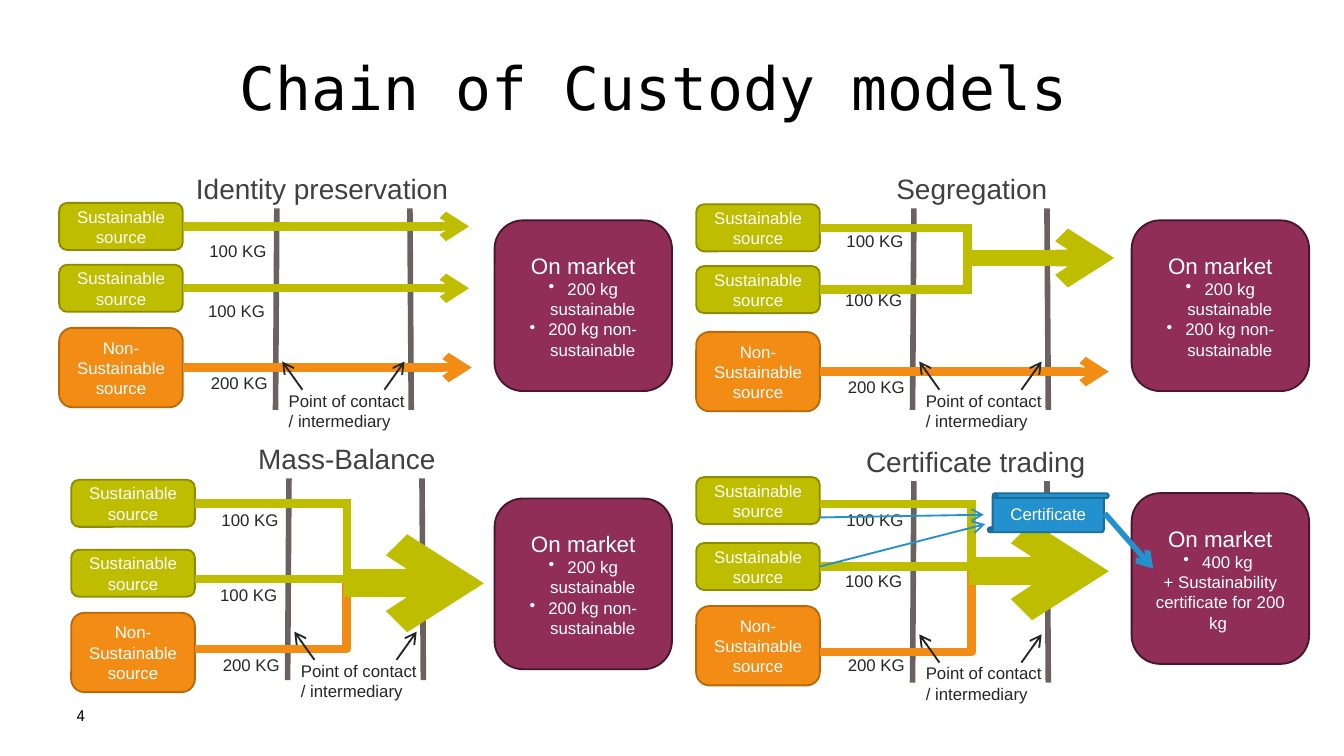
from pptx import Presentation
from pptx.dml.color import RGBColor
from pptx.enum.shapes import MSO_CONNECTOR, MSO_SHAPE
from pptx.enum.text import MSO_ANCHOR, PP_ALIGN
from pptx.oxml.ns import qn
from pptx.util import Inches, Pt
from lxml.etree import SubElement

GREEN, DARK_GREEN = RGBColor(0xBE, 0xBD, 0x00), RGBColor(0x8D, 0x8C, 0x00)
ORANGE, DARK_ORANGE = RGBColor(0xF2, 0x8C, 0x14), RGBColor(0xBA, 0x69, 0x0A)
PLUM, DARK_PLUM = RGBColor(0x90, 0x2E, 0x57), RGBColor(0x48, 0x17, 0x2C)
BLUE, DARK_BLUE = RGBColor(0x23, 0x91, 0xCE), RGBColor(0x1A, 0x6D, 0x9A)
GRAY, HEADING = RGBColor(0x6B, 0x62, 0x5F), RGBColor(0x40, 0x40, 0x40)
INK = RGBColor(0x26, 0x26, 0x26)
BLACK, WHITE = RGBColor(0, 0, 0), RGBColor(0xFF, 0xFF, 0xFF)

deck = Presentation()
deck.slide_width, deck.slide_height = Inches(10), Inches(5.625)
page = deck.slides.add_slide(deck.slide_layouts[6])

# Grid of 100 columns by 56.25 rows
COLUMN = deck.slide_width / 100
ROW = deck.slide_height / 56.25


def add_box(text, left, top, width, height, shape=None, fill=None, outline=None,
            size=9, lead=None, color=INK, font="Arial", align=PP_ALIGN.LEFT,
            inset=None, spacing=None):
    """Place text, in a preset shape if given; lines that start with • are bullets."""
    area = [int(left * COLUMN), int(top * ROW), int(width * COLUMN), int(height * ROW)]
    if shape is None:
        box = page.shapes.add_textbox(*area)
    else:
        box = page.shapes.add_shape(shape, *area)
        box.shadow.inherit = False
        box.fill.solid()
        box.fill.fore_color.rgb = fill
        box.line.color.rgb = outline
        box.line.width = Pt(1)
        color, align = WHITE, PP_ALIGN.CENTER
    frame = box.text_frame
    frame.word_wrap = True
    frame.vertical_anchor = MSO_ANCHOR.MIDDLE if shape else MSO_ANCHOR.TOP
    if inset is not None:
        frame.margin_left = frame.margin_right = inset
        frame.margin_top = frame.margin_bottom = inset
    for index, words in enumerate(text.split("\n")):
        para = frame.add_paragraph() if index else frame.paragraphs[0]
        para.alignment = align
        if spacing:
            para.line_spacing = spacing
        if words.startswith("•"):
            layout = para._p.get_or_add_pPr()
            layout.set("marL", str(Inches(0.14)))
            layout.set("indent", str(-Inches(0.14)))
            SubElement(layout, qn("a:buChar")).set("char", "•")
        span = para.add_run()
        span.text = words.removeprefix("•")
        span.font.name = font
        span.font.size = Pt(lead if lead and index == 0 else size)
        span.font.color.rgb = color
    return box


def add_line(x1, y1, x2, y2, color, width, arrow=False, elbow=False, start=None):
    """Draw a connector, optionally joined to the right side of a start box."""
    kind = MSO_CONNECTOR.ELBOW if elbow else MSO_CONNECTOR.STRAIGHT
    line = page.shapes.add_connector(kind, int(x1 * COLUMN), int(y1 * ROW),
                                     int(x2 * COLUMN), int(y2 * ROW))
    line.line.color.rgb = color
    line.line.width = Pt(width)
    if start is not None:
        line.begin_connect(start, 3)
    properties = line._element.spPr
    if arrow:
        SubElement(properties.find(qn("a:ln")), qn("a:tailEnd")).set("type", "arrow")
    if elbow:
        guide = SubElement(properties.find(qn("a:prstGeom")).find(qn("a:avLst")), qn("a:gd"))
        guide.set("name", "adj1")
        guide.set("fmla", "val 100000")
    SubElement(properties, qn("a:effectLst"))


# Slide title and number
add_box("Chain of Custody models ", 11.1, 4.4, 77.8, 8.8, size=32, color=BLACK,
        font="DejaVu Sans Mono", align=PP_ALIGN.CENTER, inset=0, spacing=0.9)
add_box("4", 4.7, 52.1, 4.6, 3, size=8, color=BLACK, font="Noto Sans Mono")

SOURCES = [
    ("Sustainable source", 3.5, GREEN, DARK_GREEN, "100 KG", 10.2),
    ("Sustainable source", 3.5, GREEN, DARK_GREEN, "100 KG", 10.1),
    ("Non-Sustainable source", 5.9, ORANGE, DARK_ORANGE, "200 KG", 10.3),
]
SPLIT_MARKET = "On market\n•200 kg sustainable\n•200 kg non-sustainable"
CERTIFIED_MARKET = "On market\n•400 kg \n+ Sustainability certificate for 200 kg "

# A flow row of None starts at the middle of its source.
# join is the column where flows merge; trunk is (row, end column, width).
PANELS = [
    dict(title="Identity preservation", align=PP_ALIGN.LEFT, left=4.4, top=15.5,
         market=(SPLIT_MARKET, 36.8, 16.4), sources=(15.1, 19.7, 24.4),
         labels=(17.4, 21.9, 27.2), flows=(None, None, None),
         ends=(34.9, 34.9, 35.1), join=0, trunk=None),
    dict(title="Segregation ", align=PP_ALIGN.CENTER, left=51.8, top=15.5,
         market=(SPLIT_MARKET, 84.2, 16.4), sources=(15.2, 19.8, 24.7),
         labels=(16.7, 21.1, 27.5), flows=(None, None, None),
         ends=(72, 72, 82.5), join=72, trunk=(19.2, 82.9, 9)),
    dict(title="Mass-Balance ", align=PP_ALIGN.CENTER, left=5.3, top=35.6,
         market=(SPLIT_MARKET, 36.8, 37.1), sources=(35.7, 40.9, 45.6),
         labels=(37.4, 43, 48.2), flows=(None, 43.1, 48.3),
         ends=(25.8, 25.8, 25.8), join=25.8, trunk=(43.4, 36, 15)),
    dict(title="Certificate trading", align=PP_ALIGN.CENTER, left=51.8, top=35.8,
         market=(CERTIFIED_MARKET, 84.2, 36.7), sources=(35.5, 40.4, 45.1),
         labels=(37.4, 42, 48.2), flows=(37.5, None, 48.5),
         ends=(72.3, 72.3, 72.3), join=72.3, trunk=(42.5, 82.5, 15)),
]

for panel in PANELS:
    left, top, join, trunk = panel["left"], panel["top"], panel["join"], panel["trunk"]

    # Heading, market and the two contact bars
    add_box(panel["title"], left + 9.2, top - 3.25, 23.2, 3.5, size=15,
            color=HEADING, align=panel["align"])
    add_box(*panel["market"], 13.2, 12.7, MSO_SHAPE.ROUNDED_RECTANGLE,
            PLUM, DARK_PLUM, lead=12)
    add_line(left + 16.2, top, left + 16.1, top + 15, GRAY, 3)
    add_line(left + 26.1, top, left + 26.2, top + 15, GRAY, 3)

    # Sources with their amounts and flows
    boxes, rows = [], []
    for index, (name, height, fill, outline, amount, indent) in enumerate(SOURCES):
        source_top, end = panel["sources"][index], panel["ends"][index]
        source = add_box(name, left, source_top, 9.2, height,
                         MSO_SHAPE.ROUNDED_RECTANGLE, fill, outline)
        add_box(amount, left + indent, panel["labels"][index], 9.7, 2.5)
        row = panel["flows"][index]
        start = source if row is None else None
        row = source_top + height / 2 if row is None else row
        mixed = index == 2 and end == join
        add_line(left + 9.2, row, end, trunk[0] if mixed else row, fill, 4.5,
                 arrow=end > join, elbow=mixed, start=start)
        boxes.append(source)
        rows.append(row)

    # Merged flow
    if trunk:
        trunk_row, trunk_end, trunk_width = trunk
        add_line(join, rows[0] - 0.3, join, rows[1] + 0.3, GREEN, 4.5)
        add_line(join - 0.2, trunk_row, trunk_end, trunk_row, GREEN, trunk_width, arrow=True)

    # Pointers to the contact bars
    add_box("Point of contact / intermediary", left + 16.1, top + 13.05, 10.7, 5.6)
    add_line(left + 24.2, top + 13.5, left + 25.7, top + 11.4, INK, 1, arrow=True)
    add_line(left + 18.1, top + 13.5, left + 16.6, top + 11.4, INK, 1, arrow=True)

# Certificate, fed by the sustainable sources of the last panel
add_box("Certificate", 73.5, 36.7, 9, 2.9, MSO_SHAPE.VERTICAL_SCROLL, BLUE, DARK_BLUE)
add_line(61, 38.5, 73.2, 38.3, BLUE, 1, arrow=True)
add_line(61, 42.15, 73.3, 39, BLUE, 1, arrow=True, start=boxes[1])
add_line(82.2, 38.2, 85.8, 42.3, BLUE, 3, arrow=True)

deck.save("out.pptx")
